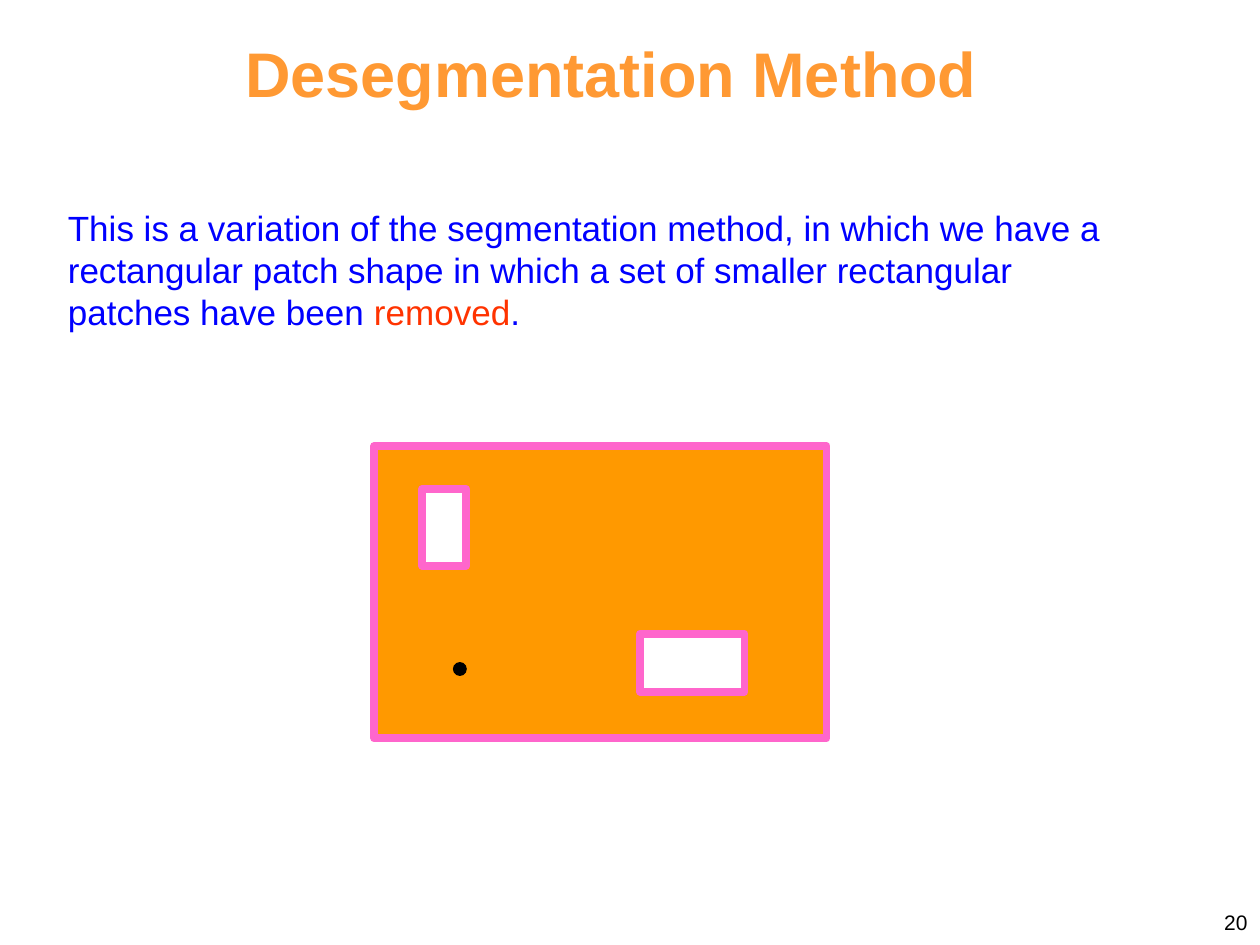
import dataclasses
import pptx
import pptx.dml.color
import pptx.enum.shapes
import pptx.enum.text
import pptx.util

Inches = pptx.util.Inches
Align = pptx.enum.text.PP_ALIGN
Anchor = pptx.enum.text.MSO_ANCHOR
Kind = pptx.enum.shapes.MSO_SHAPE


@dataclasses.dataclass(frozen=True)
class Theme:
    """Hold the colours, font and sizes of the slide."""
    font: str = "Arial"
    title: str = "FF9933"
    body: str = "0000FF"
    accent: str = "FF3300"
    patch: str = "FF9900"
    edge: str = "FF66CC"
    hole: str = "FFFFFF"
    ink: str = "000000"
    title_size: float = 36
    body_size: float = 20
    page_size: float = 12
    edge_width: float = 4.5
    dot_width: float = 0.75


THEME = Theme()


def color(code):
    """Turn a hex code into a colour."""
    return pptx.dml.color.RGBColor.from_string(code)


def add_text(slide, box, runs, size, align=Align.LEFT, anchor=Anchor.TOP, bold=False, top=0.05):
    """Add a text box with one paragraph of coloured runs."""
    frame = slide.shapes.add_textbox(*map(Inches, box)).text_frame
    frame.word_wrap = True
    frame.vertical_anchor = anchor
    frame.margin_top = Inches(top)
    para = frame.paragraphs[0]
    para.alignment = align
    para.font.name = THEME.font
    para.font.size = pptx.util.Pt(size)
    para.font.bold = bold
    for words, code in runs:
        run = para.add_run()
        run.text = words
        run.font.color.rgb = color(code)


def add_shape(group, kind, box, fill, line, width):
    """Add a filled and outlined shape to the group."""
    shape = group.shapes.add_shape(kind, *map(Inches, box))
    shape.shadow.inherit = False
    shape.fill.solid()
    shape.fill.fore_color.rgb = color(fill)
    shape.line.color.rgb = color(line)
    shape.line.width = pptx.util.Pt(width)


def add_figure(slide):
    """Draw the patch with its holes and the dot."""
    group = slide.shapes.add_group_shape()
    patches = [
        ((2.97, 3.54, 3.59, 2.32), THEME.patch),
        ((3.35, 3.88, 0.35, 0.61), THEME.hole),
        ((5.08, 5.03, 0.83, 0.46), THEME.hole),
    ]
    for box, fill in patches:
        add_shape(group, Kind.RECTANGLE, box, fill, THEME.edge, THEME.edge_width)
    add_shape(group, Kind.OVAL, (3.6, 5.26, 0.1, 0.1), THEME.ink, THEME.ink, THEME.dot_width)


def main():
    """Build and save the slide."""
    deck = pptx.Presentation()
    deck.slide_width, deck.slide_height = Inches(10), Inches(7.5)
    slide = deck.slides.add_slide(deck.slide_layouts[6])
    body = [
        ("This is a variation of the segmentation method, in which we have a "
         "rectangular patch shape in which a set of smaller rectangular "
         "patches have been ", THEME.body),
        ("removed", THEME.accent),
        (".", THEME.body),
    ]
    add_text(slide, (0.44, 1.59, 8.68, 1.1), body, THEME.body_size)
    add_text(slide, (1.21, 0.27, 7.28, 0.61), [("Desegmentation Method", THEME.title)],
             THEME.title_size, Align.CENTER, Anchor.MIDDLE, True)
    add_figure(slide)
    add_text(slide, (7.67, 6.98, 2.33, 0.52), [("20", THEME.ink)],
             THEME.page_size, Align.RIGHT, top=0.24)
    deck.save("out.pptx")


if __name__ == "__main__":
    main()
